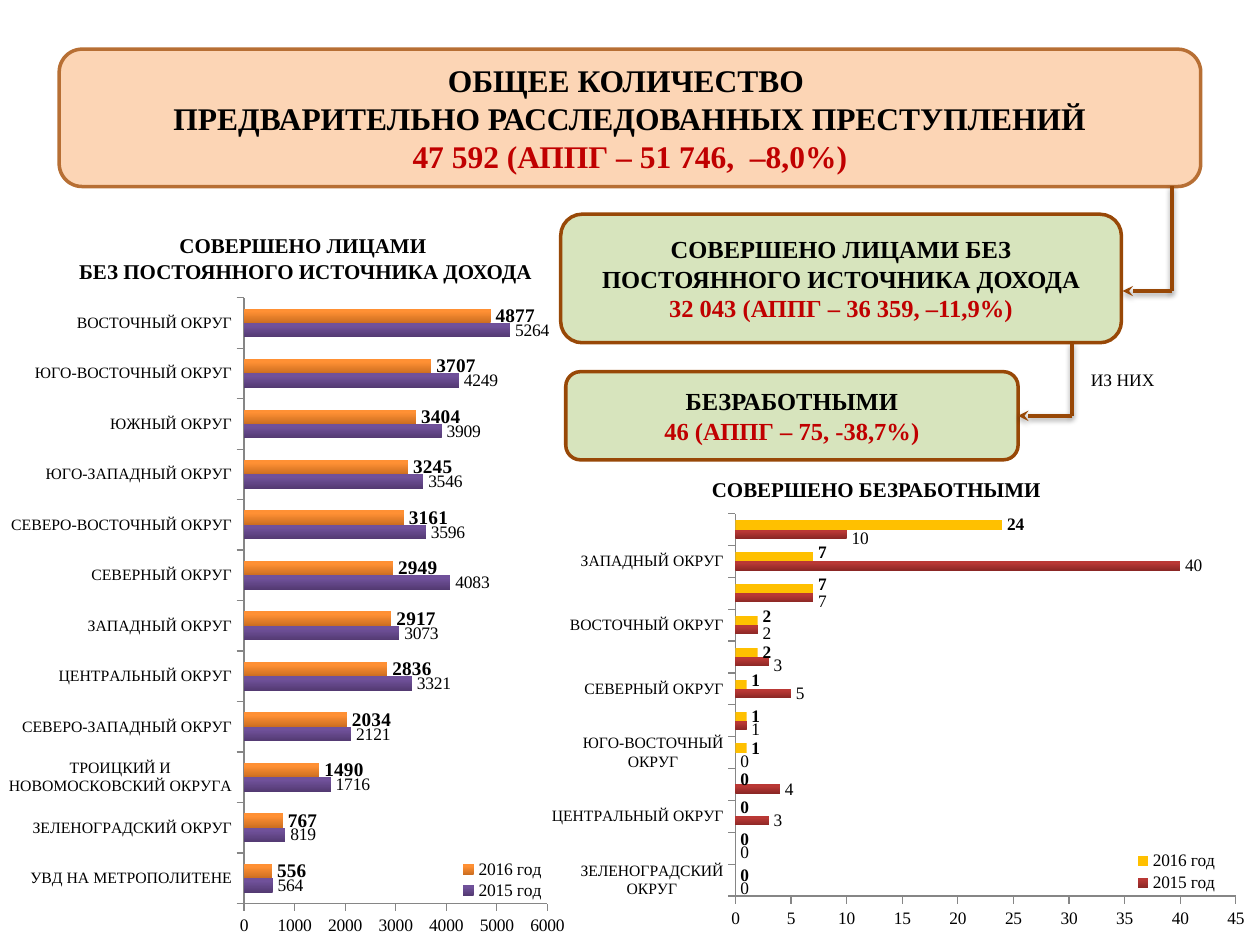
import pptx
import pptx.chart.data
import pptx.dml.color
import pptx.enum.chart
import pptx.enum.shapes
import pptx.enum.text
import pptx.oxml.ns
import pptx.util

SERIF = "Times New Roman"
BLACK, RED, BROWN, GREEN = "000000", "C00000", "984807", "D7E4BD"
ORANGE_BAR, YELLOW_BAR = ("CC6E20", "FF9034"), ("FFC000", "FFC000")
PURPLE_BAR, RED_BAR = ("533A72", "70519A"), ("8B2725", "B93835")
CENTER, LEFT = pptx.enum.text.PP_ALIGN.CENTER, pptx.enum.text.PP_ALIGN.LEFT

INCOME_ROWS = [
    ("УВД НА МЕТРОПОЛИТЕНЕ", 564, 556), ("ЗЕЛЕНОГРАДСКИЙ ОКРУГ", 819, 767),
    ("ТРОИЦКИЙ И НОВОМОСКОВСКИЙ ОКРУГА", 1716, 1490), ("СЕВЕРО-ЗАПАДНЫЙ ОКРУГ", 2121, 2034),
    ("ЦЕНТРАЛЬНЫЙ ОКРУГ", 3321, 2836), ("ЗАПАДНЫЙ ОКРУГ", 3073, 2917),
    ("СЕВЕРНЫЙ ОКРУГ", 4083, 2949), ("СЕВЕРО-ВОСТОЧНЫЙ ОКРУГ", 3596, 3161),
    ("ЮГО-ЗАПАДНЫЙ ОКРУГ", 3546, 3245), ("ЮЖНЫЙ ОКРУГ", 3909, 3404),
    ("ЮГО-ВОСТОЧНЫЙ ОКРУГ", 4249, 3707), ("ВОСТОЧНЫЙ ОКРУГ", 5264, 4877),
]
UNEMPLOYED_ROWS = [
    ("ЗЕЛЕНОГРАДСКИЙ ОКРУГ", 0, 0), ("УВД НА МЕТРОПОЛИТЕНЕ", 0, 0),
    ("ЦЕНТРАЛЬНЫЙ ОКРУГ", 3, 0), ("ЮГО-ЗАПАДНЫЙ ОКРУГ", 4, 0),
    ("ЮГО-ВОСТОЧНЫЙ ОКРУГ", 0, 1), ("СЕВЕРО-ЗАПАДНЫЙ ОКРУГ", 1, 1),
    ("СЕВЕРНЫЙ ОКРУГ", 5, 1), ("СЕВЕРО-ВОСТОЧНЫЙ ОКРУГ", 3, 2),
    ("ВОСТОЧНЫЙ ОКРУГ", 2, 2), ("ЮЖНЫЙ ОКРУГ", 7, 7),
    ("ЗАПАДНЫЙ ОКРУГ", 40, 7), ("ТРОИЦКИЙ И НОВОМОСКОВСКИЙ ОКРУГА", 10, 24),
]
UNEMPLOYED_SHIFTS = ((0.01, (0, 4, 5, 7, 8, 9, 11)), (-0.01, (1, 2, 6, 8, 9, 10)))

def rgb(value):
    """Turn a hex string into a colour."""
    return pptx.dml.color.RGBColor.from_string(value)

def inches(box):
    """Turn numbers into lengths in inches."""
    return [pptx.util.Inches(length) for length in box]

def style_font(font, size, bold=False, color=BLACK):
    """Format a font in the slide's serif face."""
    font.name, font.size, font.bold = SERIF, pptx.util.Pt(size), bold
    font.color.rgb = rgb(color)

def write_lines(frame, lines, size, bold=True, align=CENTER):
    """Write (text, colour) lines as paragraphs."""
    frame.word_wrap = True
    frame.text = "\n".join(text for text, color in lines)
    for para, (text, color) in zip(frame.paragraphs, lines):
        para.alignment = align
        for span in para.runs:
            style_font(span.font, size, bold, color)

def add_panel(page, box, lines, size, fill, line):
    """Draw a rounded panel with centred text."""
    panel = page.shapes.add_shape(pptx.enum.shapes.MSO_SHAPE.ROUNDED_RECTANGLE, *inches(box))
    panel.shadow.inherit = False
    panel.fill.solid()
    panel.fill.fore_color.rgb = rgb(fill)
    panel.line.color.rgb = rgb(line)
    panel.line.width = pptx.util.Pt(2)
    panel.text_frame.vertical_anchor = pptx.enum.text.MSO_ANCHOR.MIDDLE
    write_lines(panel.text_frame, lines, size)
    return panel

def add_caption(page, box, texts, size, bold=True, align=CENTER):
    """Place a plain text caption."""
    caption = page.shapes.add_textbox(*inches(box))
    write_lines(caption.text_frame, [(text, BLACK) for text in texts], size, bold, align)
    caption.text_frame.auto_size = pptx.enum.text.MSO_AUTO_SIZE.SHAPE_TO_FIT_TEXT

def add_line(page, start, end, arrow=False):
    """Draw a brown shadowed line, with an arrowhead if asked."""
    line = page.shapes.add_connector(
        pptx.enum.shapes.MSO_CONNECTOR.STRAIGHT, *inches(start + end))
    line.line.color.rgb = rgb(BROWN)
    line.line.width = pptx.util.Pt(2)
    namespace = pptx.oxml.ns.nsdecls("a")
    if arrow:
        line.line._get_or_add_ln().append(
            pptx.oxml.parse_xml(f'<a:tailEnd {namespace} type="stealth"/>'))
    line._element.spPr.append(pptx.oxml.parse_xml(
        f'<a:effectLst {namespace}><a:outerShdw blurRad="40000" dist="20000" '
        'dir="5400000" rotWithShape="0"><a:srgbClr val="000000">'
        '<a:alpha val="38000"/></a:srgbClr></a:outerShdw></a:effectLst>'))
    return line

def add_elbow(page, corner, top, right):
    """Lead down from top to the corner, then left to an arrowhead."""
    x, y = corner
    add_line(page, (x, top), (x, y))
    return add_line(page, (x, y), (right, y), arrow=True)

def make_layout(keys, values, settings=""):
    """Build a manual chart layout from fractions of the chart."""
    sizes = "".join(f'<c:{key} val="{value}"/>' for key, value in zip(keys, values))
    return pptx.oxml.parse_xml(f'<c:layout {pptx.oxml.ns.nsdecls("c")}><c:manualLayout>'
                               f"{settings}{sizes}</c:manualLayout></c:layout>")

def place_part(part, index, box, settings=""):
    """Replace the automatic layout of a chart part by a fixed box."""
    for layout in part.findall(pptx.oxml.ns.qn("c:layout")):
        part.remove(layout)
    settings += '<c:xMode val="edge"/><c:yMode val="edge"/>'
    part.insert(index, make_layout("xywh", box, settings))

def format_series(series, colors, size, bold, shift, points):
    """Fill bars with an upward gradient and label them, shifting some labels."""
    series.invert_if_negative = False
    fill = series.format.fill
    fill.gradient()
    fill.gradient_angle = 90
    for stop, color, position in zip(fill.gradient_stops, colors, (0, 0.8)):
        stop.color.rgb, stop.position = rgb(color), position
    series.data_labels.show_value = True
    labels = [series.points[index].data_label for index in points]
    for label in [series.data_labels] + labels:
        label.position = pptx.enum.chart.XL_LABEL_POSITION.OUTSIDE_END
        style_font(label.font, size, bold)
    for label in labels:
        label._get_or_add_dLbl().insert(1, make_layout("xy", (0, shift)))

def add_bars(page, box, rows, fills, bold_size, scale, plot, legend_box, shifts):
    """Draw a two-year bar chart by district."""
    names, previous, current = zip(*rows)
    data = pptx.chart.data.CategoryChartData()
    data.categories = names
    data.add_series("2015 год", previous)
    data.add_series("2016 год", current)
    kind = pptx.enum.chart.XL_CHART_TYPE.BAR_CLUSTERED
    chart = page.shapes.add_chart(kind, *inches(box), data).chart
    chart.has_title = False
    chart.font.name, chart.font.size = "Calibri", pptx.util.Pt(10)
    chart.font.color.rgb = rgb(BLACK)
    bars = chart.plots[0]
    bars.gap_width, bars.vary_by_categories = 150, False
    styles = zip(bars.series, fills, (10, bold_size), (False, True), shifts)
    for series, colors, size, bold, (shift, points) in styles:
        format_series(series, colors, size, bold, shift, points)
    for axis, size in ((chart.category_axis, 9), (chart.value_axis, 10)):
        axis.has_major_gridlines = False
        axis.major_tick_mark = pptx.enum.chart.XL_TICK_MARK.OUTSIDE
        axis.format.line.color.rgb = rgb("868686")
        style_font(axis.tick_labels.font, size)
    axis = chart.value_axis
    axis.minimum_scale, (axis.maximum_scale, axis.major_unit) = 0, scale
    chart.has_legend = True
    chart.legend.position = pptx.enum.chart.XL_LEGEND_POSITION.RIGHT
    chart.legend.include_in_layout = False
    style_font(chart.legend.font, 10)
    place_part(chart.legend._element, 1, legend_box)
    place_part(chart._chartSpace.chart.plotArea, 0, plot, '<c:layoutTarget val="inner"/>')

def main():
    """Build the slide and save it."""
    deck = pptx.Presentation()
    deck.slide_width, deck.slide_height = inches((10, 7.5))
    page = deck.slides.add_slide(deck.slide_layouts[6])
    add_bars(page, (0, 2.21, 5.28, 5.29), INCOME_ROWS, (PURPLE_BAR, ORANGE_BAR), 11, (6000, 1000),
             (0.367, 0.029, 0.456, 0.909), (0.67, 0.87, 0.17, 0.065), ((0, ()), (0, ())))
    add_panel(page, (0.47, 0.39, 9.06, 1.09), [
        ("ОБЩЕЕ КОЛИЧЕСТВО ", BLACK), ("ПРЕДВАРИТЕЛЬНО РАССЛЕДОВАННЫХ ПРЕСТУПЛЕНИЙ", BLACK),
        ("47 592 (АППГ – 51 746,  –8,0%)", RED)], 18, "FCD5B5", "B76F34")
    add_panel(page, (4.45, 1.7, 4.45, 1.02), [
        ("СОВЕРШЕНО ЛИЦАМИ БЕЗ ПОСТОЯННОГО ИСТОЧНИКА ДОХОДА", BLACK),
        ("32 043 (АППГ – 36 359, –11,9%)", RED)], 14, GREEN, BROWN)
    unemployed = add_panel(page, (4.49, 2.95, 3.59, 0.7), [
        ("БЕЗРАБОТНЫМИ", BLACK), ("46 (АППГ – 75, -38,7%)", RED)], 14, GREEN, BROWN)
    add_elbow(page, (9.3, 2.31), 1.48, 8.91)
    add_elbow(page, (8.51, 3.3), 2.72, 8.08).end_connect(unemployed, 3)
    add_caption(page, (8.56, 2.88, 0.74, 0.27), ["ИЗ НИХ"], 10, False, LEFT)
    add_caption(page, (0.47, 1.8, 3.91, 0.51),
                ["СОВЕРШЕНО ЛИЦАМИ ", "БЕЗ ПОСТОЯННОГО ИСТОЧНИКА ДОХОДА"], 12)
    add_caption(page, (4.38, 3.73, 5.15, 0.3), ["СОВЕРШЕНО БЕЗРАБОТНЫМИ"], 12)
    add_bars(page, (4.38, 4.03, 5.5, 3.34), UNEMPLOYED_ROWS, (RED_BAR, YELLOW_BAR), 10, (45, 5),
             (0.257, 0.014, 0.73, 0.909), (0.82, 0.81, 0.16, 0.11), UNEMPLOYED_SHIFTS)
    deck.save("out.pptx")

if __name__ == "__main__":
    main()
